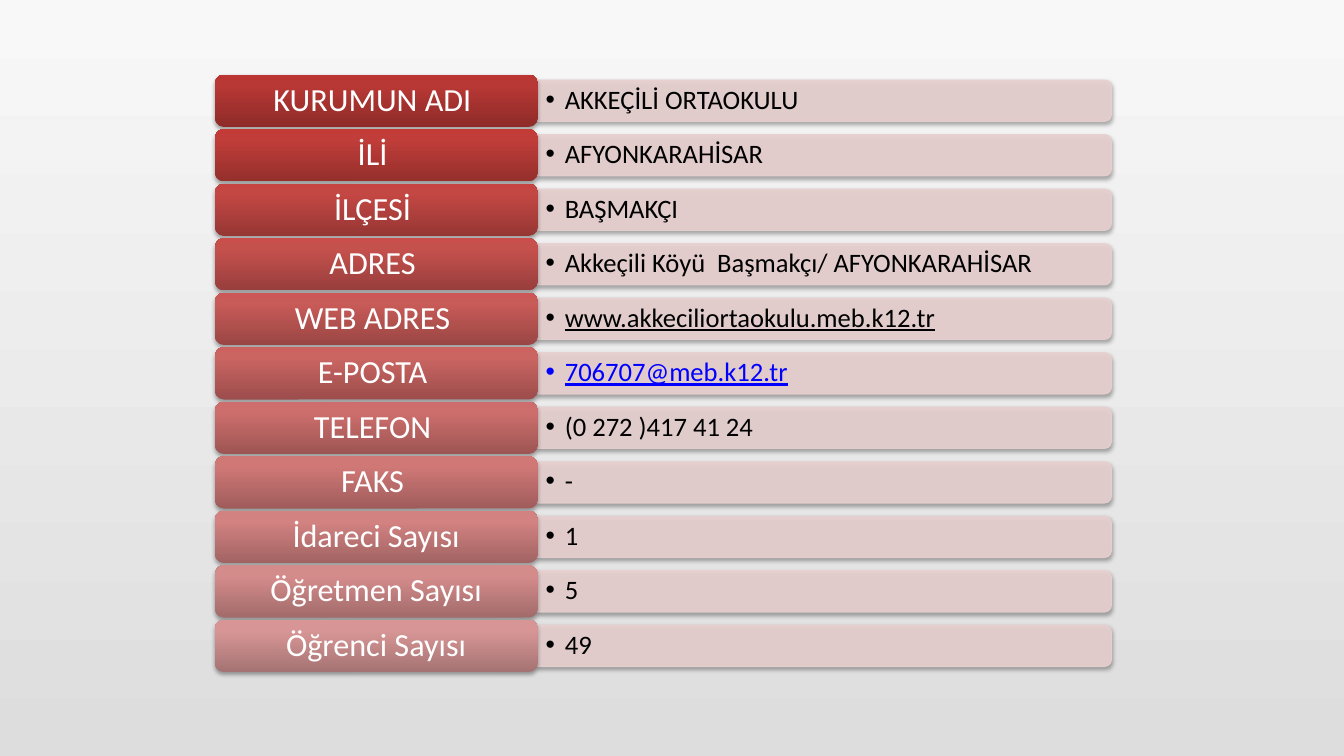
from copy import deepcopy
from dataclasses import dataclass

from lxml import etree
from pptx import Presentation
from pptx import util as u
from pptx.dml.color import RGBColor
from pptx.enum import shapes, text
from pptx.oxml.ns import qn

SLIDE_WIDTH, SLIDE_HEIGHT = u.Inches(13.33), u.Inches(7.5)
FONT = "Calibri"
BLACK = RGBColor(0x00, 0x00, 0x00)
WHITE = RGBColor(0xFF, 0xFF, 0xFF)
LINK_BLUE = RGBColor(0x00, 0x00, 0xFF)
PANEL_PINK = RGBColor(0xE8, 0xD0, 0xD0)
BACKDROP_TOP = RGBColor(0xF8, 0xF8, 0xF8)
BACKDROP_BOTTOM = RGBColor(0xDD, 0xDD, 0xDD)

# Label gradients, from the bottom edge up
HEAD_SHADES = (RGBColor(0x8E, 0x2B, 0x28), RGBColor(0xB8, 0x38, 0x35), RGBColor(0xBB, 0x36, 0x32))
DEEP_SHADES = (RGBColor(0x94, 0x2F, 0x2C), RGBColor(0xC0, 0x3D, 0x39), RGBColor(0xC4, 0x3A, 0x37))
PALE_SHADES = (RGBColor(0xA5, 0x73, 0x73), RGBColor(0xD7, 0x96, 0x95), RGBColor(0xD9, 0x95, 0x94))

# Grid, in percent of the slide's width or height
LABEL_LEFT, LABEL_WIDTH = 16, 24
VALUE_LEFT, PANEL_WIDTH = 40, 42.7
FIRST_ROW, ROW_PITCH = 9.87, 7.21
LABEL_HEIGHT, PANEL_HEIGHT = 6.93, 5.47


@dataclass(frozen=True)
class Detail:
    label: str
    value: str
    color: RGBColor = BLACK
    underlined: bool = False


DETAILS = [
    Detail("KURUMUN ADI ", "AKKEÇİLİ ORTAOKULU"),
    Detail("İLİ ", "AFYONKARAHİSAR"),
    Detail("İLÇESİ ", "BAŞMAKÇI"),
    Detail("ADRES ", "Akkeçili Köyü  Başmakçı/ AFYONKARAHİSAR"),
    Detail("WEB ADRES ", "www.akkeciliortaokulu.meb.k12.tr", underlined=True),
    Detail("E-POSTA ", "706707@meb.k12.tr", LINK_BLUE, True),
    Detail("TELEFON ", "(0 272 )417 41 24"),
    Detail("FAKS ", "-"),
    Detail("İdareci Sayısı", "1"),
    Detail("Öğretmen Sayısı", "5"),
    Detail("Öğrenci Sayısı", "49"),
]


def across(percent: float) -> int:
    return round(SLIDE_WIDTH * percent / 100)


def down(percent: float) -> int:
    return round(SLIDE_HEIGHT * percent / 100)


def row_shades(row: int) -> list[RGBColor]:
    """Fade from deep to pale red below the separately coloured first row."""
    if row == 0:
        return list(HEAD_SHADES)
    share = (row - 1) / (len(DETAILS) - 2)
    return [
        RGBColor(*(round(a + (b - a) * share) for a, b in zip(deep, pale)))
        for deep, pale in zip(DEEP_SHADES, PALE_SHADES)
    ]


def fill_gradient(fill, colors: list[RGBColor], positions: list[float], angle: float) -> None:
    fill.gradient()
    fill.gradient_angle = angle
    first_stop = fill._fill._gradFill.gsLst[0]
    for _ in colors[2:]:
        first_stop.addnext(deepcopy(first_stop))
    for stop, color, position in zip(fill.gradient_stops, colors, positions):
        stop.color.rgb = color
        stop.position = position


def add_soft_shadow(shape) -> None:
    shape.shadow.inherit = False
    effects = shape._element.spPr.find(qn("a:effectLst"))
    shadow = etree.SubElement(
        effects, qn("a:outerShdw"), blurRad=str(u.Pt(3.1)), dist=str(u.Pt(1.8)),
        dir="5400000", rotWithShape="0",
    )
    black = etree.SubElement(shadow, qn("a:srgbClr"), val=str(BLACK))
    etree.SubElement(black, qn("a:alpha"), val="35000")


def make_translucent(shape) -> None:
    for color in shape._element.spPr.iter(qn("a:srgbClr")):
        etree.SubElement(color, qn("a:alpha"), val="90000")


def write_line(frame, words: str, size: float, color: RGBColor, inset: float):
    """Write one vertically centred line and return its paragraph and run."""
    frame.word_wrap = True
    frame.vertical_anchor = text.MSO_ANCHOR.MIDDLE
    frame.margin_left = frame.margin_right = u.Inches(inset)
    frame.margin_top = frame.margin_bottom = u.Inches(inset / 2)
    paragraph = frame.paragraphs[0]
    paragraph.line_spacing = 0.9
    run = paragraph.add_run()
    run.text = words
    run.font.name = FONT
    run.font.size = u.Pt(size)
    run.font.color.rgb = color
    return paragraph, run


def add_value(slide, detail: Detail, middle: int) -> None:
    length, thickness = across(PANEL_WIDTH), down(PANEL_HEIGHT)
    center = across(VALUE_LEFT) + length // 2
    # A quarter turn brings the two rounded corners to the right end
    panel = slide.shapes.add_shape(
        shapes.MSO_SHAPE.ROUND_2_SAME_RECTANGLE,
        center - thickness // 2, middle - length // 2, thickness, length,
    )
    panel.rotation = 90
    panel.fill.solid()
    panel.fill.fore_color.rgb = PANEL_PINK
    panel.line.color.rgb = PANEL_PINK
    panel.line.width = u.Pt(0.75)
    make_translucent(panel)
    add_soft_shadow(panel)

    value = slide.shapes.add_textbox(
        across(VALUE_LEFT), middle - thickness // 2, length, thickness
    )
    paragraph, run = write_line(value.text_frame, detail.value, 19, detail.color, 0.08)
    run.font.underline = detail.underlined or None
    paragraph.level = 1
    properties = paragraph._p.get_or_add_pPr()
    properties.set("marL", str(u.Inches(0.19)))
    properties.set("indent", str(u.Inches(-0.19)))
    etree.SubElement(properties, qn("a:buFont"), typeface="Arial")
    etree.SubElement(properties, qn("a:buChar"), char="•")


def add_label(slide, words: str, middle: int, shades: list[RGBColor]) -> None:
    height = down(LABEL_HEIGHT)
    label = slide.shapes.add_shape(
        shapes.MSO_SHAPE.ROUNDED_RECTANGLE,
        across(LABEL_LEFT), middle - height // 2, across(LABEL_WIDTH), height,
    )
    fill_gradient(label.fill, shades, [0, 0.8, 1], 90)
    label.line.fill.background()
    add_soft_shadow(label)
    paragraph, _ = write_line(label.text_frame, words, 23, WHITE, 0.1)
    paragraph.alignment = text.PP_ALIGN.CENTER


def main() -> None:
    deck = Presentation()
    deck.slide_width, deck.slide_height = SLIDE_WIDTH, SLIDE_HEIGHT
    slide = deck.slides.add_slide(deck.slide_layouts.get_by_name("Blank"))
    fill_gradient(slide.background.fill, [BACKDROP_TOP, BACKDROP_BOTTOM], [0, 1], 270)
    for row, detail in enumerate(DETAILS):
        middle = down(FIRST_ROW + row * ROW_PITCH + LABEL_HEIGHT / 2)
        add_value(slide, detail, middle)
        add_label(slide, detail.label, middle, row_shades(row))
    deck.save("out.pptx")


if __name__ == "__main__":
    main()
